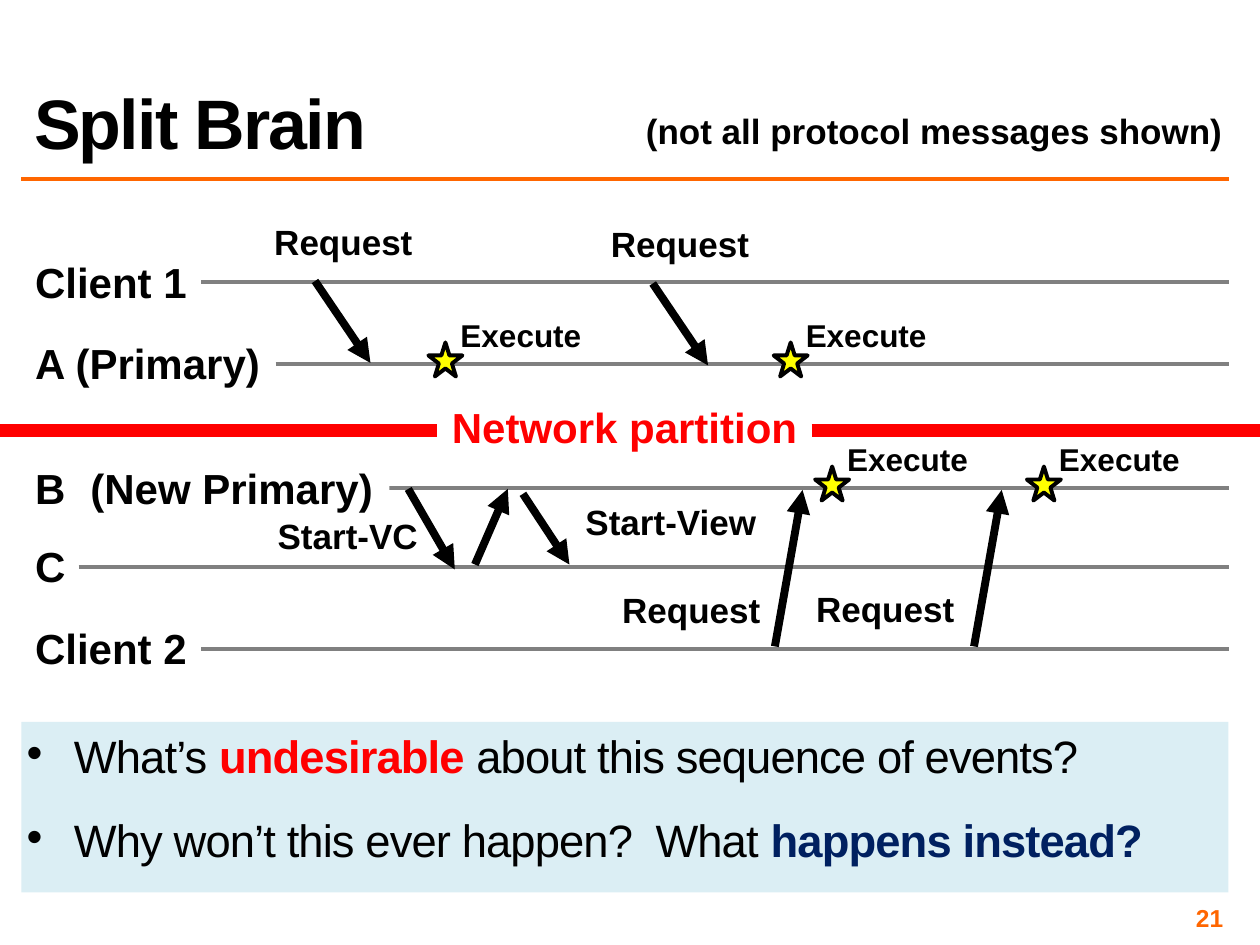
import pptx
import pptx.dml.color
import pptx.enum.shapes
import pptx.enum.text
import pptx.oxml.ns
import pptx.util
import lxml.etree

Pt = pptx.util.Pt
ALIGN = pptx.enum.text.PP_ALIGN
ANCHOR = pptx.enum.text.MSO_ANCHOR

THEME = {
    "font": "Arial",
    "black": "000000", "white": "FFFFFF", "orange": "FF6600", "red": "FF0000",
    "navy": "002060", "gray": "808080", "pale": "DBEEF4", "yellow": "FFFF00",
    "title": 40, "body": 25.9, "lane": 24, "message": 20, "execute": 18, "number": 14,
}

TITLE = "Split Brain"
REMARK = ("(not all protocol messages shown)", 360.7, 59, 346.3)
PAGE = "21"
QUESTIONS = [
    [("What’s ", "black", False), ("undesirable ", "red", True),
     ("about this sequence of events?", "black", False)],
    [("Why won’t this ever happen?  What ", "black", False),
     ("happens instead?", "navy", True)],
]
LANES = {
    "Client 1": (161.3, 102),
    "A (Primary)": (208.1, 144.5),
    "B": (279, 32),
    "C": (324, 32),
    "Client 2": (370.8, 102),
}
NEW_PRIMARY = ("(New Primary)", 44.6, 178)
PARTITION = ("Network partition", 250, 226, 213.8)
MESSAGE_LABELS = [
    ("Request", 149, 122.4, 94.5),
    ("Request", 341.3, 123.8, 94.5),
    ("Start-View", 326.9, 282.2, 113),
    ("Start-VC", 151.2, 290.4, 95),
    ("Request", 347.8, 332.9, 94.5),
    ("Request", 458.6, 332.4, 94.5),
]
MESSAGES = [
    (180, 160.6, 211.7, 207.4),
    (373, 162, 404.6, 208.8),
    (233.3, 279.4, 259.9, 325.4),
    (271.4, 322.6, 290.2, 279.4),
    (298.8, 282.2, 325.4, 322.6),
    (442.8, 369.4, 458.6, 280),
    (556.6, 369.4, 572.4, 280),
]
EXECUTIONS = [("A (Primary)", 244.8), ("A (Primary)", 442.1),
              ("B", 465.8), ("B", 586.8)]

LEFT, RIGHT, WIDTH = 12.24, 702, 720
LANE_LEFT, LANE_RISE, STAR = 13, 18.5, 19.5

deck = pptx.Presentation()
deck.slide_width, deck.slide_height = Pt(WIDTH), Pt(540)
slide = deck.slides.add_slide(deck.slide_layouts[1])


def color(name):
    return pptx.dml.color.RGBColor.from_string(THEME[name])


def place(shape, *box):
    shape.left, shape.top, shape.width, shape.height = map(Pt, box)


def style(run, size, ink="black", bold=True, spacing=0):
    run.font.name = THEME["font"]
    run.font.size = Pt(THEME[size])
    run.font.bold = bold
    run.font.color.rgb = color(ink)
    if spacing:
        run.font._element.set("spc", str(spacing))


def label(text, left, top, width, size, ink="black", align=ALIGN.LEFT):
    height = THEME[size] * 1.2 + 7.2
    box = slide.shapes.add_textbox(Pt(left), Pt(top), Pt(width), Pt(height))
    box.text_frame.word_wrap = False
    box.text_frame.text = text
    paragraph = box.text_frame.paragraphs[0]
    paragraph.alignment = align
    style(paragraph.runs[0], size, ink)
    return box


def line(x1, y1, x2, y2, ink, weight, arrow=False):
    connector = slide.shapes.add_connector(
        pptx.enum.shapes.MSO_CONNECTOR.STRAIGHT, Pt(x1), Pt(y1), Pt(x2), Pt(y2))
    connector.line.color.rgb = color(ink)
    connector.line.width = Pt(weight)
    if arrow:
        tail = lxml.etree.SubElement(connector.line._ln, pptx.oxml.ns.qn("a:tailEnd"))
        tail.set("type", "triangle")
    lxml.etree.SubElement(connector._element.spPr, pptx.oxml.ns.qn("a:effectLst"))


def add_title():
    title = slide.shapes.title
    place(title, LEFT, LEFT, RIGHT - LEFT, 84.2)
    frame = title.text_frame
    frame.text = TITLE
    frame.auto_size = pptx.enum.text.MSO_AUTO_SIZE.NONE
    frame.vertical_anchor = ANCHOR.BOTTOM
    paragraph = frame.paragraphs[0]
    paragraph.alignment = ALIGN.LEFT
    paragraph.line_spacing = 0.8
    style(paragraph.runs[0], "title", spacing=-100)


def add_questions():
    body = slide.placeholders[1]
    place(body, LEFT, 412.5, RIGHT - LEFT, 97.5)
    body.fill.solid()
    body.fill.fore_color.rgb = color("pale")
    frame = body.text_frame
    frame.auto_size = pptx.enum.text.MSO_AUTO_SIZE.NONE
    frame.margin_left = frame.margin_right = Pt(3)
    frame.margin_top, frame.margin_bottom = Pt(14.4), Pt(7.2)
    for index, question in enumerate(QUESTIONS):
        paragraph = frame.add_paragraph() if index else frame.paragraphs[0]
        paragraph.line_spacing = 0.6
        paragraph.space_before = Pt(29.5 if index else 5.2)
        properties = paragraph._p.get_or_add_pPr()
        properties.set("marL", str(Pt(27)))
        properties.set("indent", str(Pt(-27)))
        for text, ink, bold in question:
            run = paragraph.add_run()
            run.text = text
            style(run, "body", ink, bold, -50)


def add_lanes():
    for name, (y, width) in LANES.items():
        label(name, LANE_LEFT, y - LANE_RISE, width, "lane")
        line(LANE_LEFT + width, y, RIGHT, y, "gray", 2.25)
    text, left, width = NEW_PRIMARY
    cover = label(text, left, LANES["B"][0] - LANE_RISE, width, "lane")
    cover.fill.solid()
    cover.fill.fore_color.rgb = color("white")


def add_partition():
    text, left, top, width = PARTITION
    label(text, left, top, width, "lane", "red", ALIGN.CENTER)
    for start, end in ((0, left), (left + width, WIDTH)):
        line(start, 246, end, 246, "red", 7.5)


def add_executions():
    for lane, left in EXECUTIONS:
        top = LANES[lane][0] - 12.4
        label("Execute", left + 10.8, top - 18.9, 84.2, "execute", align=ALIGN.CENTER)
        star = slide.shapes.add_shape(
            pptx.enum.shapes.MSO_SHAPE.STAR_5_POINT, Pt(left), Pt(top), Pt(STAR), Pt(STAR))
        star.shadow.inherit = False
        star.fill.solid()
        star.fill.fore_color.rgb = color("yellow")
        star.line.color.rgb = color("black")
        star.line.width = Pt(2.25)


def add_page_number():
    number = label(PAGE, 534.2, 516.2, RIGHT - 534.2, "number", "orange", ALIGN.RIGHT)
    number.height = Pt(16.6)
    frame = number.text_frame
    frame.word_wrap = True
    frame.vertical_anchor = ANCHOR.MIDDLE
    frame.margin_left = frame.margin_right = Pt(3)
    frame.margin_top = frame.margin_bottom = Pt(3)


add_title()
line(LEFT, 102.2, RIGHT, 102.2, "orange", 2)
add_questions()
add_page_number()
add_lanes()
add_partition()
for message in MESSAGES:
    line(*message, "black", 4.5, arrow=True)
for caption in [REMARK] + MESSAGE_LABELS:
    label(*caption, "message", align=ALIGN.CENTER)
add_executions()
deck.save("out.pptx")
